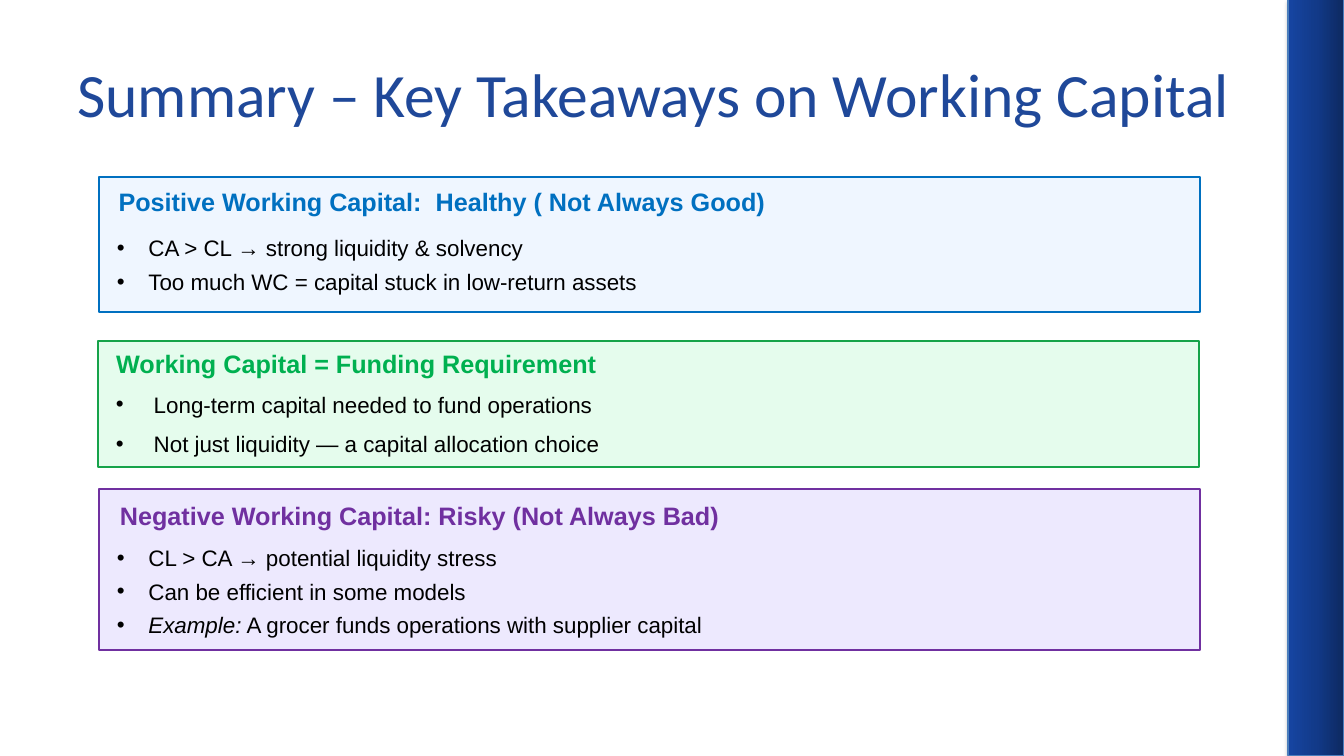
from copy import deepcopy

from lxml import etree
from pptx import Presentation
from pptx import util as u
from pptx.dml.color import RGBColor
from pptx.enum import shapes, text
from pptx.oxml.ns import qn

Pt = u.Pt
SLIDE_WIDTH, SLIDE_HEIGHT = 960, 540
PANEL_WIDTH = 787
HEADING_WIDTH, BULLETS_WIDTH = 762, 757.5

# Each panel: box, fill, accent, heading and its offset,
# bullets with their offset, indent and space after
PANELS = [
    dict(box=(70.5, 126.7, PANEL_WIDTH, 96.5), fill="EFF6FF", line="0070C0", accent="0070C0",
         heading="Positive Working Capital:  Healthy ( Not Always Good)", heading_at=(14.2, 6.5),
         bullets=["CA > CL → strong liquidity & solvency",
                  "Too much WC = capital stuck in low-return assets"],
         bullets_at=(13, 36), indent=22.5, after=0),
    dict(box=(69.8, 243.4, PANEL_WIDTH, 90), fill="E5FCED", line="16A34A", accent="00B050",
         heading="Working Capital = Funding Requirement", heading_at=(13.2, 5.7),
         bullets=["Long-term capital needed to fund operations",
                  "Not just liquidity — a capital allocation choice"],
         bullets_at=(13, 31), indent=27, after=4),
    dict(box=(70.5, 349.2, PANEL_WIDTH, 115.2), fill="EDE9FE", line="7030A0", accent="7030A0",
         heading="Negative Working Capital: Risky (Not Always Bad)", heading_at=(15.2, 8),
         bullets=["CL > CA → potential liquidity stress",
                  "Can be efficient in some models",
                  ("Example:", " A grocer funds operations with supplier capital")],
         bullets_at=(13, 34.6), indent=22.5, after=0),
]


def colour(value):
    return RGBColor.from_string(value)


def add_rectangle(page, box, line, weight):
    rectangle = page.shapes.add_shape(shapes.MSO_SHAPE.RECTANGLE, *map(Pt, box))
    rectangle.shadow.inherit = False
    rectangle.line.color.rgb = colour(line)
    rectangle.line.width = Pt(weight)
    return rectangle


def add_text_frame(page, box):
    frame = page.shapes.add_textbox(*map(Pt, box)).text_frame
    frame.word_wrap = True
    frame.margin_left = frame.margin_top = frame.margin_right = frame.margin_bottom = 0
    return frame


def format_font(font, name, size, value, bold=False):
    font.name, font.size, font.bold = name, Pt(size), bold
    font.color.rgb = colour(value)


def add_bullet(para, indent):
    properties = para._p.get_or_add_pPr()
    properties.set("marL", str(Pt(indent)))
    properties.set("indent", str(-Pt(indent)))
    etree.SubElement(properties, qn("a:buFont"), typeface="Arial")
    etree.SubElement(properties, qn("a:buChar"), char="•")


def add_side_bar(page, box):
    bar = add_rectangle(page, box, "4B7EBC", 0.75)
    # Three-stop gradient, dark at the right edge
    bar.fill.gradient()
    bar.fill.gradient_angle = 180
    stop_list = bar._element.spPr.find(".//" + qn("a:gsLst"))
    stop_list.append(deepcopy(stop_list[-1]))
    for stop, position, value in zip(bar.fill.gradient_stops, (0, 0.5, 1),
                                     ("0D2960", "123A89", "1645A2")):
        stop.position = position
        stop.color.rgb = colour(value)
    # Soft shadow
    effects = bar._element.spPr.find(qn("a:effectLst"))
    shadow = etree.SubElement(effects, qn("a:outerShdw"), blurRad=str(Pt(3.1)),
                              dist=str(Pt(1.8)), dir="5400000", rotWithShape="0")
    shade = etree.SubElement(shadow, qn("a:srgbClr"), val="000000")
    etree.SubElement(shade, qn("a:alpha"), val="35000")


def place_title(page, box, wording):
    title = page.shapes.title
    title.left, title.top, title.width, title.height = map(Pt, box)
    frame = title.text_frame
    frame.text = wording
    frame.vertical_anchor = text.MSO_ANCHOR.MIDDLE
    para = frame.paragraphs[0]
    para.alignment = text.PP_ALIGN.LEFT
    format_font(para.runs[0].font, "Calibri", 44, "1F4899")


def add_panel(page, box, fill, line, accent, heading, heading_at,
              bullets, bullets_at, indent, after):
    left, top, _, height = box
    panel = add_rectangle(page, box, line, 1.5)
    panel.fill.solid()
    panel.fill.fore_color.rgb = colour(fill)

    # Heading
    frame = add_text_frame(page, (left + heading_at[0], top + heading_at[1], HEADING_WIDTH, 25))
    frame.text = heading
    format_font(frame.paragraphs[0].runs[0].font, "Arial", 18, accent, bold=True)

    # Bullets; a pair has an italic lead-in
    frame = add_text_frame(page, (left + bullets_at[0], top + bullets_at[1],
                                  BULLETS_WIDTH, height - bullets_at[1] - 6))
    for index, bullet in enumerate(bullets):
        para = frame.add_paragraph() if index else frame.paragraphs[0]
        para.line_spacing = Pt(24)
        para.space_after = Pt(after)
        add_bullet(para, indent)
        pieces = (bullet,) if isinstance(bullet, str) else bullet
        for piece in pieces:
            span = para.add_run()
            span.text = piece
            format_font(span.font, "Arial", 16, "000000")
        para.runs[0].font.italic = len(pieces) > 1


def build_summary(deck):
    page = deck.slides.add_slide(deck.slide_layouts[5])
    page.background.fill.solid()
    page.background.fill.fore_color.rgb = colour("FFFFFF")
    add_side_bar(page, (920, 0, SLIDE_WIDTH - 920, SLIDE_HEIGHT))
    place_title(page, (48, 21.6, 864, 90), "Summary – Key Takeaways on Working Capital")
    for panel in PANELS:
        add_panel(page, **panel)


def main():
    deck = Presentation()
    deck.slide_width, deck.slide_height = Pt(SLIDE_WIDTH), Pt(SLIDE_HEIGHT)
    build_summary(deck)
    deck.save("out.pptx")


if __name__ == "__main__":
    main()
